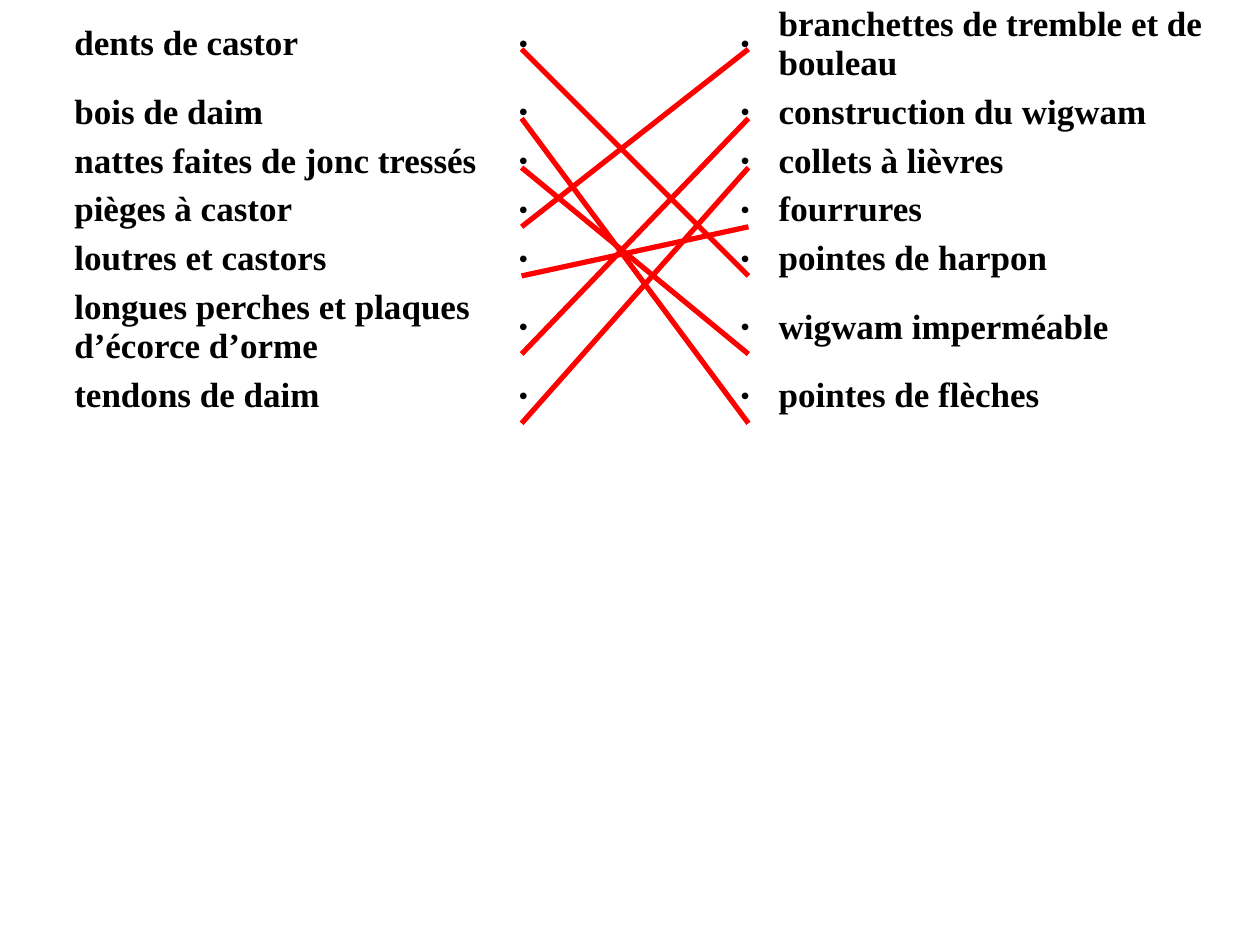
import pptx
import pptx.dml.color
import pptx.enum.shapes
import pptx.enum.text
import pptx.util
from pptx.oxml.ns import qn
import lxml.etree

# Content: left item, right item, row of the matching right item
PAIRS = [
    ("dents de castor", "branchettes de tremble et de bouleau", 4),
    ("bois de daim", "construction du wigwam", 6),
    ("nattes faites de jonc tressés", "collets à lièvres", 5),
    ("pièges à castor", "fourrures", 0),
    ("loutres et castors", "pointes de harpon", 3),
    ("longues perches et plaques d’écorce d’orme", "wigwam imperméable", 1),
    ("tendons de daim", "pointes de flèches", 2),
]

# Grid, in inches
TABLE_LEFT = 0.55
COLUMNS = [3.53, 0.2, 1.56, 0.3, 3.86]
SINGLE, DOUBLE = 0.38, 0.69
TWO_LINE_ROWS = (0, 5)
INSET = 0.04
LINE_LEFT, LINE_RIGHT = 4.14, 5.94
LINE_ENDS = [0.39, 0.94, 1.33, 1.8, 2.19, 2.81, 3.36]

inch = pptx.util.Inches


def color(value):
    return pptx.dml.color.RGBColor.from_string(value)


def fill_cell(cell, text, size, name, bold):
    cell.fill.background()
    cell.vertical_anchor = pptx.enum.text.MSO_ANCHOR.MIDDLE
    cell.margin_left = cell.margin_right = inch(INSET)
    cell.margin_top = cell.margin_bottom = inch(INSET)
    p = cell.text_frame.paragraphs[0]
    if text:
        p.text = text
    p.font.size = pptx.util.Pt(size)
    p.font.name = name
    p.font.bold = bold
    p.font.color.rgb = color("000000")


def add_table(slide):
    heights = [DOUBLE if i in TWO_LINE_ROWS else SINGLE for i in range(len(PAIRS))]
    frame = slide.shapes.add_table(
        len(PAIRS), len(COLUMNS), inch(TABLE_LEFT), 0,
        inch(sum(COLUMNS)), inch(sum(heights)))
    table = frame.table
    table.first_row = table.horz_banding = False
    for column, width in zip(table.columns, COLUMNS):
        column.width = inch(width)
    for row, height, (left, right, _) in zip(table.rows, heights, PAIRS):
        row.height = inch(height)
        for cell, text in zip(row.cells, (left, "•", "", "•", right)):
            if text in (left, right):
                fill_cell(cell, text, 20, "Times New Roman", True)
            else:
                fill_cell(cell, text, 14, "Arial", False)


def add_match(slide, start, end):
    line = slide.shapes.add_connector(
        pptx.enum.shapes.MSO_CONNECTOR.STRAIGHT,
        inch(LINE_LEFT), inch(LINE_ENDS[start]),
        inch(LINE_RIGHT), inch(LINE_ENDS[end]))
    line.line.color.rgb = color("FF0000")
    line.line.width = pptx.util.Pt(3)
    lxml.etree.SubElement(line._element.spPr, qn("a:effectLst"))


def main():
    prs = pptx.Presentation()
    prs.slide_width, prs.slide_height = inch(10), inch(7.5)
    slide = prs.slides.add_slide(prs.slide_layouts[6])

    # Two lists with their dots
    add_table(slide)

    # Red answer lines
    for row, (_, _, match) in enumerate(PAIRS):
        add_match(slide, row, match)

    prs.save("out.pptx")


if __name__ == "__main__":
    main()
